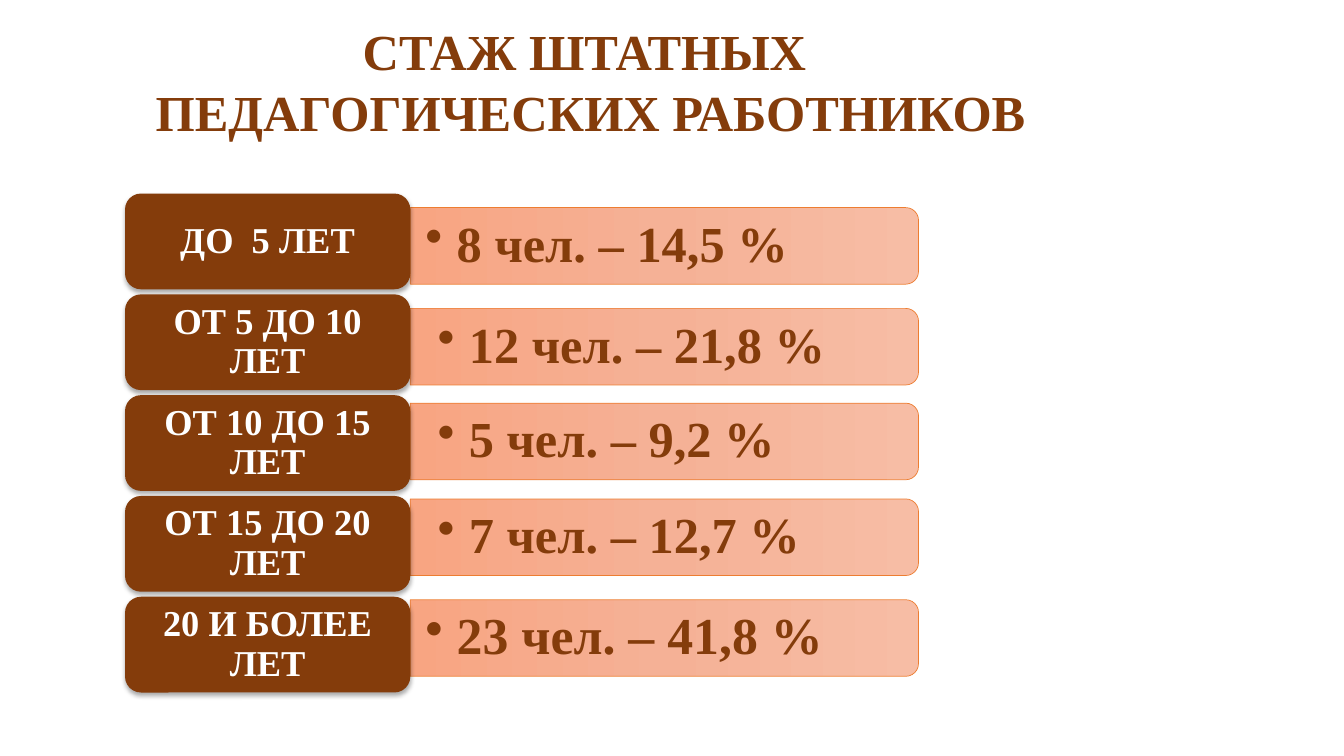
from copy import deepcopy
from dataclasses import dataclass

from lxml import etree
from pptx import Presentation
from pptx.dml.color import RGBColor
from pptx.enum.shapes import MSO_SHAPE
from pptx.enum.text import MSO_ANCHOR, PP_ALIGN
from pptx.oxml.ns import qn
from pptx.util import Inches, Pt

ROUND = MSO_SHAPE.ROUNDED_RECTANGLE
TAB = MSO_SHAPE.ROUND_2_SAME_RECTANGLE
TOP, MIDDLE = MSO_ANCHOR.TOP, MSO_ANCHOR.MIDDLE
LEFT, CENTER = PP_ALIGN.LEFT, PP_ALIGN.CENTER


@dataclass(frozen=True)
class Theme:
    font: str = "Times New Roman"
    brown: str = "843C0B"
    white: str = "FFFFFF"
    edge: str = "ED7D31"
    fade: tuple = ("F7BDA5", "F5B196", "F8A582")
    title: int = 36
    label: int = 26
    value: int = 36
    last: int = 37


THEME = Theme()
NARROW, WIDE = (0.15, 0.08), (0.27, 0.14)
# label, value, middle of the bar, value insets, value size
ROWS = (
    ("ДО  5 ЛЕТ", "8 чел. – 14,5 %", 2.44, NARROW, THEME.value),
    ("ОТ 5 ДО 10 ЛЕТ", "12 чел. – 21,8 %", 3.44, WIDE, THEME.value),
    ("ОТ 10 ДО 15 ЛЕТ", "5 чел. – 9,2 %", 4.38, WIDE, THEME.value),
    ("ОТ 15 ДО 20 ЛЕТ", "7 чел. – 12,7 %", 5.33, WIDE, THEME.value),
    ("20 И БОЛЕЕ ЛЕТ", "23 чел. – 41,8 %", 6.33, NARROW, THEME.last),
)
ROW_TOP, ROW_STEP = 1.92, 1.0
LABEL_X, LABEL_W, LABEL_H = 1.24, 2.83, 0.95
BAR_X, BAR_W, BAR_H = LABEL_X + LABEL_W, 5.04, 0.76
VALUE_W, VALUE_H = 5, 0.69


def color(code):
    return RGBColor.from_string(code)


def place(left, top, width, height):
    return [Inches(n) for n in (left, top, width, height)]


def write(shape, text, *, size, ink, align=LEFT, anchor=MIDDLE,
          pad=(0.1, 0.05), space=1.0, bullet=False):
    frame = shape.text_frame
    frame.word_wrap = True
    frame.vertical_anchor = anchor
    frame.margin_left = frame.margin_right = Inches(pad[0])
    frame.margin_top = frame.margin_bottom = Inches(pad[1])
    frame.text = text
    for para in frame.paragraphs:
        para.alignment = align
        para.line_spacing = space
        para.space_before = Pt(0)
        if bullet:
            add_bullet(para)
        for run in para.runs:
            font = run.font
            font.name, font.size, font.bold = THEME.font, Pt(size), True
            font.color.rgb = color(ink)


def add_bullet(para):
    props = para._p.get_or_add_pPr()
    props.set("marL", str(Inches(0.31)))
    props.set("indent", str(-Inches(0.31)))
    etree.SubElement(props, qn("a:buChar"), char="•")


def add_shadow(shape):
    shape.shadow.inherit = False
    effects = shape._element.spPr.find(qn("a:effectLst"))
    drop = etree.SubElement(
        effects, qn("a:outerShdw"), blurRad=str(Pt(3.5)), dist=str(Pt(2.2)),
        dir="5400000", algn="ctr", rotWithShape="0")
    tint = etree.SubElement(drop, qn("a:srgbClr"), val="000000")
    etree.SubElement(tint, qn("a:alpha"), val="32000")


def fill_fade(shape):
    """Fill with the theme's three-stop fade, from top to bottom."""
    fill = shape.fill
    fill.gradient()
    fill.gradient_angle = 270
    stops = shape._element.spPr.find(".//" + qn("a:gsLst"))
    stops.insert(1, deepcopy(stops[0]))
    for num, (stop, code) in enumerate(zip(fill.gradient_stops, THEME.fade)):
        stop.position = num / 2
        stop.color.rgb = color(code)


def add_bar(slide, middle):
    """Add a bar turned so that its round corners face right."""
    left = BAR_X + (BAR_W - BAR_H) / 2
    bar = slide.shapes.add_shape(
        TAB, *place(left, middle - BAR_W / 2, BAR_H, BAR_W))
    bar.rotation = 90
    bar.shadow.inherit = False
    fill_fade(bar)
    bar.line.color.rgb = color(THEME.edge)
    bar.line.width = Pt(0.5)


def add_value(slide, text, middle, pad, size):
    box = slide.shapes.add_textbox(
        *place(BAR_X, middle - VALUE_H / 2, VALUE_W, VALUE_H))
    write(box, text, size=size, ink=THEME.brown, pad=pad, space=0.9,
          bullet=True)


def add_label(slide, text, top):
    label = slide.shapes.add_shape(
        ROUND, *place(LABEL_X, top, LABEL_W, LABEL_H))
    label.fill.solid()
    label.fill.fore_color.rgb = color(THEME.brown)
    label.line.fill.background()
    add_shadow(label)
    write(label, text, size=THEME.label, ink=THEME.white, align=CENTER,
          pad=(0.11, 0.05), space=0.9)


def set_title(slide, text):
    title = slide.shapes.title
    title.left, title.top, title.width, title.height = place(
        -0.14, 0.15, 12, 1.31)
    write(title, text, size=THEME.title, ink=THEME.brown, align=CENTER,
          anchor=TOP)


def main():
    deck = Presentation()
    deck.slide_width, deck.slide_height = Inches(13.33), Inches(7.5)
    slide = deck.slides.add_slide(deck.slide_layouts[5])
    set_title(slide, "СТАЖ ШТАТНЫХ \vПЕДАГОГИЧЕСКИХ РАБОТНИКОВ")
    for num, (label, value, middle, pad, size) in enumerate(ROWS):
        add_bar(slide, middle)
        add_value(slide, value, middle, pad, size)
        add_label(slide, label, ROW_TOP + num * ROW_STEP)
    deck.save("out.pptx")


if __name__ == "__main__":
    main()
